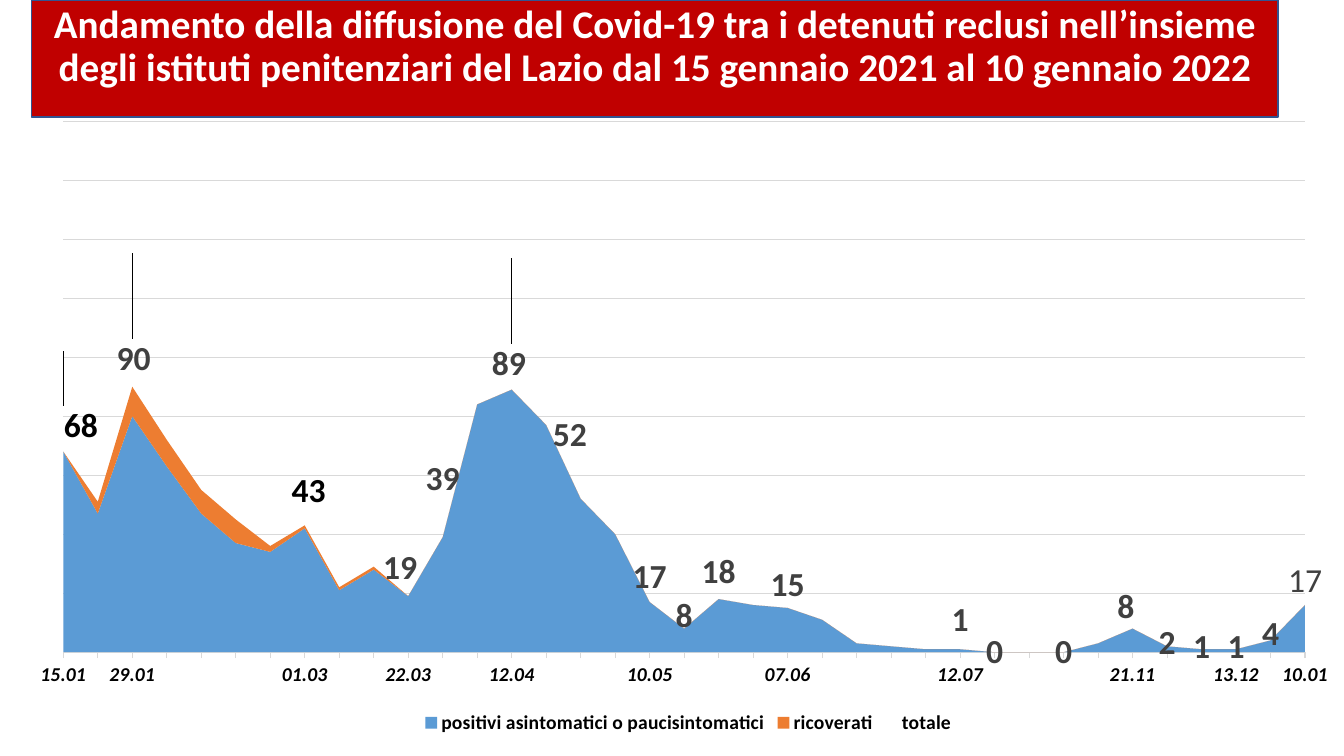
from dataclasses import dataclass

from pptx import Presentation
from pptx.chart.data import CategoryChartData
from pptx.dml.color import RGBColor as RGB
from pptx.enum.chart import XL_CHART_TYPE as CT, XL_LEGEND_POSITION as LP
from pptx.enum.chart import XL_TICK_MARK as TM
from pptx.enum.shapes import MSO_SHAPE as SHAPE
from pptx.enum.text import MSO_ANCHOR as ANCHOR, PP_ALIGN as ALIGN
from pptx.oxml import parse_xml
from pptx.oxml.ns import nsdecls
from pptx.util import Cm, Pt


@dataclass(frozen=True)
class Theme:
    font: str = "Calibri"
    white: RGB = RGB(0xFF, 0xFF, 0xFF)
    black: RGB = RGB(0, 0, 0)
    label: RGB = RGB(0x40, 0x40, 0x40)
    grid: RGB = RGB(0xD9, 0xD9, 0xD9)
    banner: RGB = RGB(0xC0, 0, 0)
    border: RGB = RGB(0x32, 0x54, 0x91)
    blue: RGB = RGB(0x5B, 0x9B, 0xD5)
    orange: RGB = RGB(0xED, 0x7D, 0x31)
    title_size: Pt = Pt(28)
    label_size: Pt = Pt(24)
    axis_size: Pt = Pt(14)
    base_size: Pt = Pt(10)


T = Theme()

TITLE = ("Andamento della diffusione del Covid-19 tra i detenuti reclusi nell’insieme "
         "degli istituti penitenziari del Lazio dal 15 gennaio 2021 al 10 gennaio 2022")

# Survey dates that are named on the axis, by position
WEEKS = 37
DATES = {0: "15.01", 2: "29.01", 7: "01.03", 10: "22.03", 13: "12.04", 17: "10.05",
         21: "07.06", 26: "12.07", 31: "21.11", 34: "13.12", 36: "10.01"}

POSITIVE = [68, 47, 80, 63, 47, 37, 34, 42, 21, 28, 19, 39, 84, 89, 77, 52, 40, 17, 8,
            18, 16, 15, 11, 3, 2, 1, 1, 0, 0, 0, 3, 8, 2, 1, 1, 4, 16]
HOSPITAL = [0, 4, 10, 9, 8, 8, 2, 1, 1, 1, 0, 0]
TOTAL = [68, 51, 90, 72, 55, 45, 36, 43, 22, 29, 19, 39, 84, 89, 77, 52, 40, 17, 8,
         18, 16, 15, 11, 3, 2, 1, 1, 0, 0, 0, 0, 8, 2, 1, 1, 4, 16]
SERIES = [("positivi asintomatici o paucisintomatici", POSITIVE, T.blue),
          ("ricoverati", HOSPITAL + [None] * (WEEKS - len(HOSPITAL)), T.orange),
          ("totale", TOTAL, None)]

# Labelled points of the total, and how far some labels are moved (share of the chart)
LABELLED = [0, 2, 7, 10, 11, 13, 15, 17, 18, 19, 21, 26, 27, 29, *range(31, 37)]
MOVED = {0: (0.013, 0.116), 2: (0.001, 0.163), 7: (0.003, 0.046), 10: (-0.006, 0),
         13: (-0.002, 0.164), 15: (-0.008, 0.02), 26: (0, -0.043), 31: (-0.005, -0.015)}
BLACK_LABELS = (0, 7)
LAST_LABEL = "17"


def set_font(font, size, color, bold=None, italic=None):
    font.name, font.size, font.bold, font.italic = T.font, size, bold, italic
    font.color.rgb = color


def layout_xml(x, y, w=None, h=None):
    inner = w is not None
    parts = [("layoutTarget", "inner"), ("xMode", "edge"), ("yMode", "edge")] if inner else []
    parts += [("x", x), ("y", y)] + ([("w", w), ("h", h)] if inner else [])
    body = "".join(f'<c:{tag} val="{val}"/>' for tag, val in parts)
    return parse_xml(f'<c:layout {nsdecls("c")}><c:manualLayout>{body}'
                     '</c:manualLayout></c:layout>')


def add_banner(slide, x, y, w, h):
    sp = slide.shapes.add_shape(SHAPE.RECTANGLE, x, y, w, h)
    sp.shadow.inherit = False
    sp.fill.solid()
    sp.fill.fore_color.rgb = T.banner
    sp.line.color.rgb = T.border
    sp.line.width = Pt(1)
    tf = sp.text_frame
    tf.word_wrap = True
    tf.vertical_anchor = ANCHOR.TOP
    p = tf.paragraphs[0]
    p.text = TITLE
    p.alignment = ALIGN.CENTER
    p.line_spacing = 0.9
    p.space_before = Pt(10)
    set_font(p.font, T.title_size, T.white, bold=True)


def style_axes(chart):
    cat, val = chart.category_axis, chart.value_axis
    cat.major_tick_mark = TM.OUTSIDE
    cat.minor_tick_mark = TM.NONE
    cat.has_major_gridlines = False
    set_font(cat.tick_labels.font, T.axis_size, T.black, bold=True, italic=True)
    val.visible = False
    val.minimum_scale, val.maximum_scale, val.major_unit = 0, 180, 20
    val.has_major_gridlines = True
    for line in (cat.format.line, val.major_gridlines.format.line):
        line.color.rgb = T.grid
        line.width = Pt(0.75)
    # Horizontal date labels, areas starting on the axis edge
    for body in chart.element.xpath(".//c:catAx/c:txPr/a:bodyPr"):
        body.set("rot", "-60000000")
    for cross in chart.element.xpath(".//c:valAx/c:crossBetween"):
        cross.set("val", "midCat")


def label_total(chart, total):
    total.data_labels.show_value = False
    for i in LABELLED:
        label = total.points[i].data_label
        color = T.black if i in BLACK_LABELS else T.label
        if i == WEEKS - 1:
            p = label.text_frame.paragraphs[0]
            p.text = LAST_LABEL
            set_font(p.runs[0].font, T.label_size, color, bold=False)
        else:
            set_font(label.font, T.label_size, color, bold=True)
    for i, shift in MOVED.items():
        idx = chart.element.xpath(f'.//c:dLbl/c:idx[@val="{i}"]')[0]
        idx.addnext(layout_xml(*shift))


def add_trend_chart(slide, x, y, w, h):
    data = CategoryChartData()
    data.categories = [DATES.get(i, "") for i in range(WEEKS)]
    for name, values, _ in SERIES:
        data.add_series(name, values)
    chart = slide.shapes.add_chart(CT.AREA_STACKED, x, y, w, h, data).chart
    chart.has_title = False
    set_font(chart.font, T.base_size, T.black)

    # Plot area
    plot_area = chart.element.xpath(".//c:plotArea")[0]
    for old in plot_area.xpath("./c:layout"):
        plot_area.remove(old)
    plot_area.insert(0, layout_xml(0.038, 0.044, 0.918, 0.822))
    style_axes(chart)

    # Series
    plot = chart.plots[0]
    plot.vary_by_categories = False
    for series, (_, _, color) in zip(plot.series, SERIES):
        fill = series.format.fill
        if color is None:
            fill.background()
        else:
            fill.solid()
            fill.fore_color.rgb = color
        series.format.line.fill.background()
    label_total(chart, plot.series[-1])

    # Legend
    chart.has_legend = True
    chart.legend.position = LP.BOTTOM
    chart.legend.include_in_layout = False
    set_font(chart.legend.font, T.axis_size, T.black, bold=True)


def main():
    prs = Presentation()
    prs.slide_width, prs.slide_height = Cm(33.87), Cm(19.05)
    slide = prs.slides.add_slide(prs.slide_layouts[6])
    add_banner(slide, Cm(0.79), Cm(0), Cm(31.42), Cm(2.95))
    add_trend_chart(slide, Cm(0.3), Cm(2.34), Cm(34.09), Cm(16.28))
    prs.save("out.pptx")


if __name__ == "__main__":
    main()
